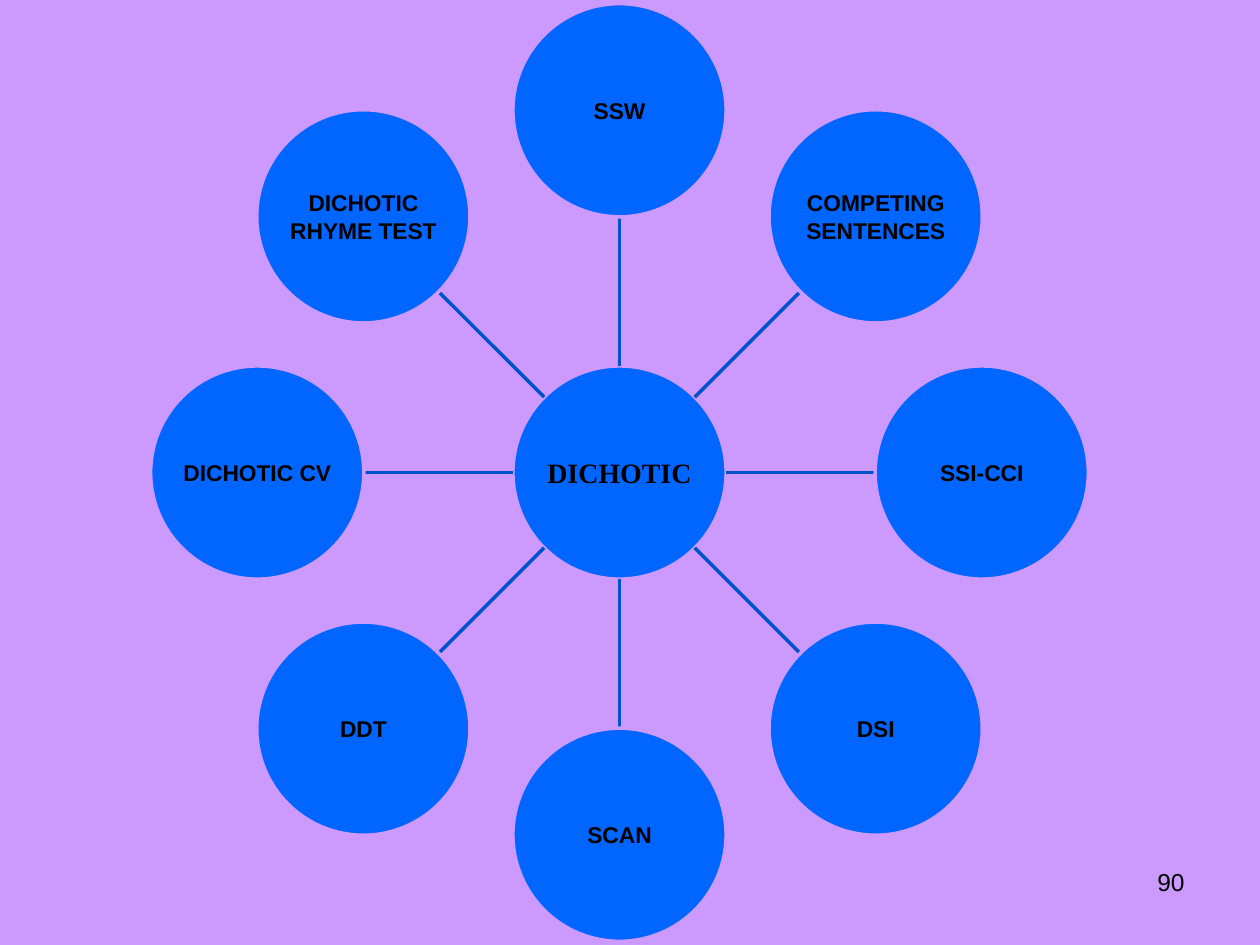
from dataclasses import dataclass
from math import cos, radians, sin

from lxml import etree
from pptx import Presentation
from pptx.dml.color import RGBColor
from pptx.enum.shapes import MSO_CONNECTOR, MSO_SHAPE
from pptx.enum.text import MSO_ANCHOR, PP_ALIGN
from pptx.oxml.ns import qn
from pptx.util import Pt

ELLIPSE = MSO_SHAPE.OVAL
STRAIGHT = MSO_CONNECTOR.STRAIGHT
MIDDLE = MSO_ANCHOR.MIDDLE
CENTER, RIGHT = PP_ALIGN.CENTER, PP_ALIGN.RIGHT

COLORS = {"background": "CC99FF", "circle": "0066FF", "spoke": "0052CC", "text": "000000"}

# Wheel geometry in points
HUB_X, HUB_Y = 354, 270
RADIUS = 60.9
ORBIT = 207
LINE_WIDTH = 2
CIRCLE_INSET = 0.8


@dataclass
class Circle:
    lines: list[str]
    x: float
    y: float
    font: str = "Arial"
    size: float = 13


def color(key: str) -> RGBColor:
    return RGBColor.from_string(COLORS[key])


def write_text(frame, lines: list[str], *, size: float, font: str = "Arial",
               bold: bool = False, align=CENTER) -> None:
    for index, line in enumerate(lines):
        paragraph = frame.paragraphs[0] if index == 0 else frame.add_paragraph()
        paragraph.alignment = align
        run = paragraph.add_run()
        run.text = line
        run.font.name = font
        run.font.size = Pt(size)
        run.font.bold = bold
        run.font.color.rgb = color("text")


def draw_circle(slide, circle: Circle) -> None:
    disc = slide.shapes.add_shape(ELLIPSE, Pt(circle.x - RADIUS), Pt(circle.y - RADIUS),
                                  Pt(2 * RADIUS), Pt(2 * RADIUS))
    disc.shadow.inherit = False
    disc.fill.solid()
    disc.fill.fore_color.rgb = color("circle")
    disc.line.color.rgb = color("background")
    disc.line.width = Pt(LINE_WIDTH)
    frame = disc.text_frame
    frame.word_wrap = False
    frame.vertical_anchor = MIDDLE
    frame.margin_left = frame.margin_right = Pt(CIRCLE_INSET)
    frame.margin_top = frame.margin_bottom = Pt(CIRCLE_INSET)
    write_text(frame, circle.lines, size=circle.size, font=circle.font, bold=True)


def on_ring(distance: float, angle: float) -> tuple[float, float]:
    """Point at a distance from the hub, with the angle clockwise from the top."""
    return (HUB_X + distance * sin(radians(angle)), HUB_Y - distance * cos(radians(angle)))


def draw_spoke(slide, angle: float) -> None:
    x1, y1 = on_ring(RADIUS, angle)
    x2, y2 = on_ring(ORBIT - RADIUS, angle)
    spoke = slide.shapes.add_connector(STRAIGHT, Pt(x1), Pt(y1), Pt(x2), Pt(y2))
    spoke.line.color.rgb = color("spoke")
    spoke.line.width = Pt(LINE_WIDTH)
    etree.SubElement(spoke._element.spPr, qn("a:effectLst"))


def main() -> None:
    deck = Presentation()
    deck.slide_width, deck.slide_height = Pt(720), Pt(540)
    slide = deck.slides.add_slide(deck.slide_layouts[6])
    slide.background.fill.solid()
    slide.background.fill.fore_color.rgb = color("background")

    # Hub
    draw_circle(slide, Circle(["DICHOTIC"], HUB_X, HUB_Y, "Times New Roman", 16))

    # Tests around the hub, clockwise from the top
    tests = [["SSW"], ["COMPETING", "SENTENCES"], ["SSI-CCI"], ["DSI"],
             ["SCAN"], ["DDT"], ["DICHOTIC CV"], ["DICHOTIC", "RHYME TEST"]]
    for index, lines in enumerate(tests):
        angle = index * 360 / len(tests)
        draw_spoke(slide, angle)
        draw_circle(slide, Circle(lines, *on_ring(ORBIT, angle)))

    # Slide number
    page_number = slide.shapes.add_textbox(Pt(516), Pt(492), Pt(168), Pt(37.5))
    page_number.text_frame.word_wrap = True
    write_text(page_number.text_frame, ["90"], size=14, align=RIGHT)

    deck.save("out.pptx")


if __name__ == "__main__":
    main()
